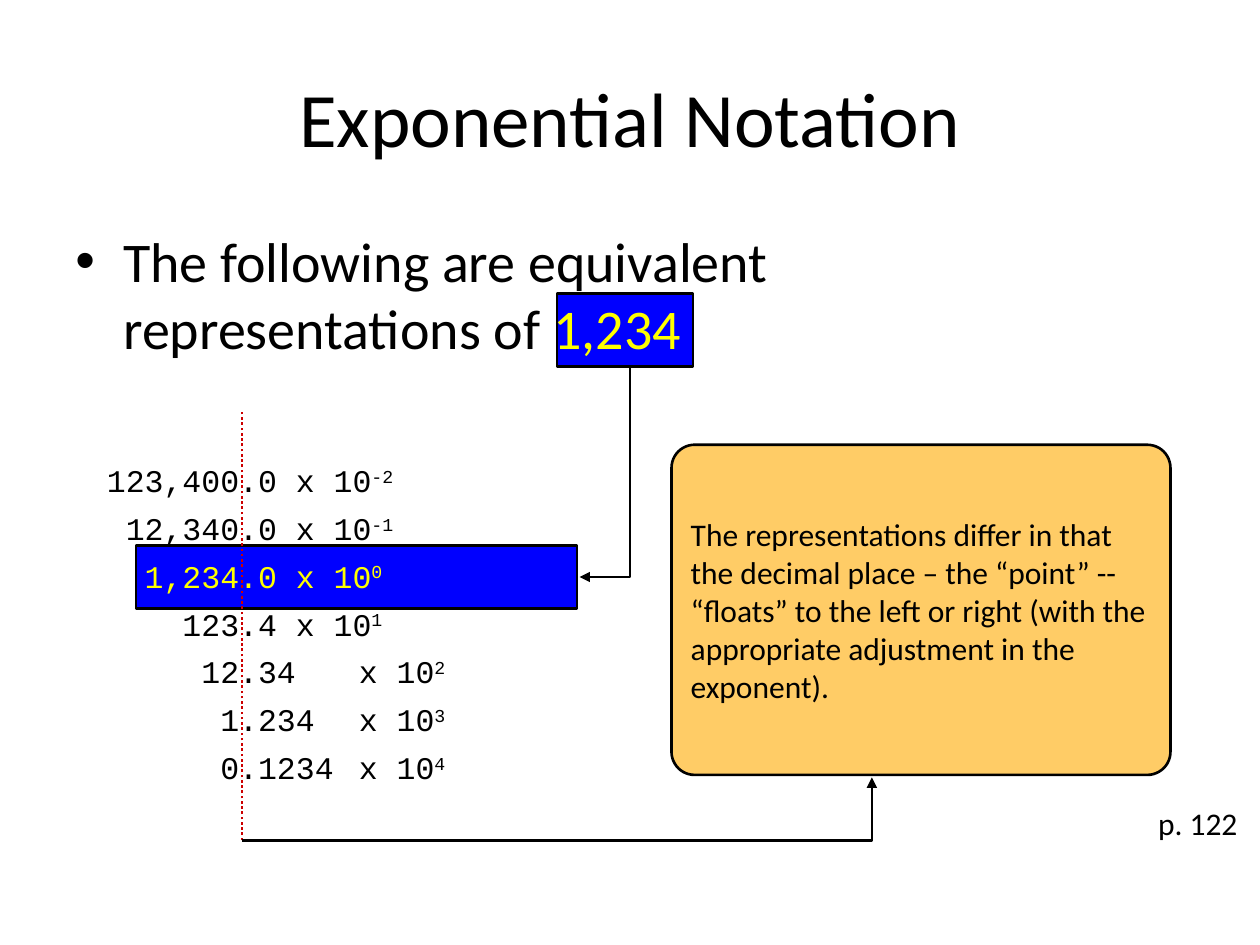
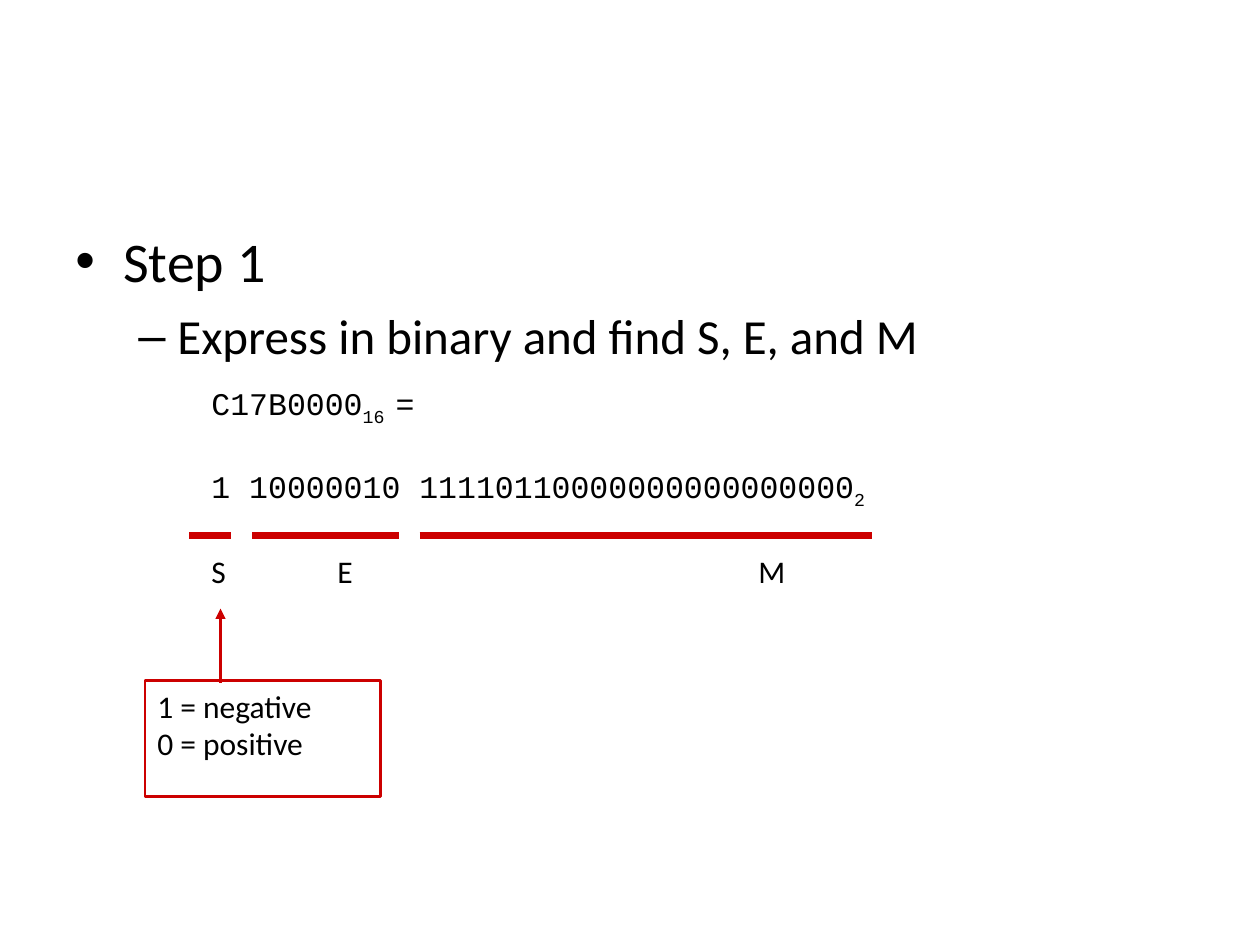
from dataclasses import dataclass

from lxml.etree import SubElement
from pptx import Presentation
from pptx.dml.color import RGBColor as RGB
from pptx.enum.dml import MSO_LINE
from pptx.enum.shapes import MSO_CONNECTOR, MSO_SHAPE as SHAPE
from pptx.enum.text import MSO_ANCHOR as ANCHOR, PP_ALIGN as ALIGN
from pptx.oxml.ns import qn
from pptx.util import Inches, Pt


@dataclass(frozen=True)
class Theme:
    black: RGB = RGB(0x00, 0x00, 0x00)
    blue: RGB = RGB(0x00, 0x00, 0xFF)
    yellow: RGB = RGB(0xFF, 0xFF, 0x00)
    orange: RGB = RGB(0xFF, 0xCC, 0x66)
    red: RGB = RGB(0xCC, 0x00, 0x00)
    sans: str = "Calibri"
    mono: str = "Courier New"
    title: int = 44
    bullet: int = 32
    sub_bullet: int = 28
    text: int = 18
    line: float = 1.5
    thick_line: float = 4.5


theme = Theme()


def style_line(shape, color, width=theme.line, arrow=False):
    """Give a shape or connector a plain outline, without shadow."""
    shape.line.color.rgb = color
    shape.line.width = Pt(width)
    properties = shape._element.spPr
    if properties.find(qn("a:effectLst")) is None:
        SubElement(properties, qn("a:effectLst"))
    if arrow:
        SubElement(shape.line._get_or_add_ln(), qn("a:tailEnd"), type="triangle")


def write(frame, runs, size=theme.text, font=theme.sans, color=theme.black, bullet=None, margin=0, hanging=0):
    """Add a paragraph made of (text, baseline in percent) runs."""
    frame.word_wrap = True
    paragraph = frame.paragraphs[0]
    if paragraph.runs:
        paragraph = frame.add_paragraph()
    paragraph.alignment = ALIGN.LEFT
    paragraph.font.size = Pt(size)
    paragraph.font.name = font
    paragraph.font.color.rgb = color
    for text, baseline in runs:
        run = paragraph.add_run()
        run.text = text
        if baseline:
            run._r.get_or_add_rPr().set("baseline", str(baseline * 1000))
    if bullet:
        properties = paragraph._p.get_or_add_pPr()
        properties.set("marL", str(Inches(margin)))
        properties.set("indent", str(-Inches(hanging)))
        SubElement(properties, qn("a:buFont"), typeface="Arial")
        SubElement(properties, qn("a:buChar"), char=bullet)
        paragraph.space_before = Pt(size * 0.24)
    return paragraph


presentation = Presentation()
presentation.slide_width = Inches(10)
presentation.slide_height = Inches(7.5)
title_only, blank = presentation.slide_layouts[5], presentation.slide_layouts[6]

# Slide 1: exponential notation
slide = presentation.slides.add_slide(title_only)
shapes = slide.shapes

title = shapes.title
title.left, title.top, title.width, title.height = map(Inches, (0.5, 0.3, 9, 1.25))
title.text_frame.vertical_anchor = ANCHOR.MIDDLE
write(title.text_frame, [("Exponential Notation", 0)], theme.title).alignment = ALIGN.CENTER

# Highlights behind the number and its matching row
for box in ((4.42, 2.33, 1.08, 0.58), (1.08, 4.33, 3.5, 0.5)):
    highlight = shapes.add_shape(SHAPE.RECTANGLE, *map(Inches, box))
    highlight.fill.solid()
    highlight.fill.fore_color.rgb = theme.blue
    style_line(highlight, theme.black)

# Dotted line through the decimal points
point_line = shapes.add_connector(
    MSO_CONNECTOR.STRAIGHT, Inches(1.92), Inches(6.67), Inches(1.92), Inches(3.25))
style_line(point_line, theme.red)
point_line.line.dash_style = MSO_LINE.ROUND_DOT

# Explanation and page reference
explanation = shapes.add_shape(
    SHAPE.ROUNDED_RECTANGLE, Inches(5.33), Inches(3.53), Inches(3.96), Inches(2.62))
explanation.adjustments[0] = 0.07
explanation.fill.solid()
explanation.fill.fore_color.rgb = theme.orange
style_line(explanation, theme.black)
explanation.text_frame.vertical_anchor = ANCHOR.MIDDLE
write(explanation.text_frame, [(
    "The representations differ in that the decimal place – the “point” -- “floats” "
    "to the left or right (with the appropriate adjustment in the exponent).", 0)])

page = shapes.add_textbox(Inches(8.75), Inches(6.33), Inches(1.17), Inches(0.4))
page_paragraph = write(page.text_frame, [("p. 122", 0)])
page_paragraph.alignment = ALIGN.RIGHT
page_paragraph.space_before = Pt(10)

# Bent arrows
for start, *bends in (
    ((5, 2.92), (5, 4.58), (4.6, 4.58)),
    ((1.92, 6.67), (6.92, 6.67), (6.92, 6.17)),
):
    builder = shapes.build_freeform(*map(Inches, start))
    builder.add_line_segments([(Inches(x), Inches(y)) for x, y in bends], close=False)
    arrow = builder.convert_to_shape()
    arrow.fill.background()
    style_line(arrow, theme.black, arrow=True)

# Statement
statement = shapes.add_textbox(Inches(0.5), Inches(1.75), Inches(8.17), Inches(4.95))
paragraph = write(
    statement.text_frame,
    [("The following are equivalent representations of ", 0), ("1,234", 0)],
    theme.bullet, bullet="•", margin=0.38, hanging=0.38)
paragraph.runs[1].font.color.rgb = theme.yellow

# Representations, indented so that the decimal points line up
character_width = 0.15
point_column, times_column = 7, 13
representations = shapes.add_textbox(Inches(0.75), Inches(3.67), Inches(4.17), Inches(2.71))
for mantissa, exponent in (
    ("123,400.0", -2), ("12,340.0", -1), ("1,234.0", 0), ("123.4", 1),
    ("12.34", 2), ("1.234", 3), ("0.1234", 4),
):
    paragraph = write(
        representations.text_frame, [(f"{mantissa}\tx 10", 0), (str(exponent), 30)],
        font=theme.mono, color=theme.yellow if exponent == 0 else theme.black)
    paragraph.line_spacing = 0.8
    paragraph.space_before = Pt(10)
    properties = paragraph._p.get_or_add_pPr()
    indent = (point_column - mantissa.index(".")) * character_width
    properties.set("marL", "0")
    properties.set("indent", str(Inches(indent)))
    tabs = SubElement(properties, qn("a:tabLst"))
    SubElement(tabs, qn("a:tab"), pos=str(Inches(times_column * character_width)), algn="l")

# Slide 2: sign, exponent and mantissa
slide = presentation.slides.add_slide(blank)
shapes = slide.shapes

steps = shapes.add_textbox(Inches(0.5), Inches(1.75), Inches(9), Inches(4.95))
write(steps.text_frame, [("Step 1", 0)], theme.bullet, bullet="•", margin=0.38, hanging=0.38)
sub_step = write(
    steps.text_frame, [("Express in binary and find S, E, and M", 0)],
    theme.sub_bullet, bullet="–", margin=0.81, hanging=0.31)
sub_step.level = 1

# Hexadecimal number and its bits
number = shapes.add_textbox(Inches(1.58), Inches(3), Inches(7.33), Inches(1.3))
write(number.text_frame, [("C17B0000", 0), ("16 ", -25), ("=", 0)], font=theme.mono)
bits = write(
    number.text_frame, [("1 10000010 11110110000000000000000", 0), ("2", -25)], font=theme.mono)
bits.space_before = Pt(23)

# Underlined fields with their letters
for letter, line_start, line_end, label_left, label_width in (
    ("S", 1.5, 1.83, 1.58, 0.39),
    ("E", 2, 3.17, 2.58, 0.4),
    ("M", 3.33, 6.92, 5.92, 0.5),
):
    underline = shapes.add_connector(
        MSO_CONNECTOR.STRAIGHT, Inches(line_start), Inches(4.25), Inches(line_end), Inches(4.25))
    style_line(underline, theme.red, theme.thick_line)
    label = shapes.add_textbox(Inches(label_left), Inches(4.33), Inches(label_width), Inches(0.5))
    write(label.text_frame, [(letter, 0)])

# Meaning of the sign bit
sign_box = shapes.add_shape(SHAPE.RECTANGLE, Inches(1.15), Inches(5.4), Inches(1.87), Inches(0.92))
sign_box.fill.background()
style_line(sign_box, theme.red)
sign_box.text_frame.vertical_anchor = ANCHOR.TOP
for meaning in ("1 = negative", "0 = positive"):
    write(sign_box.text_frame, [(meaning, 0)])

sign_arrow = shapes.add_connector(
    MSO_CONNECTOR.STRAIGHT, Inches(1.75), Inches(5.42), Inches(1.75), Inches(4.83))
style_line(sign_arrow, theme.red, arrow=True)

presentation.save("out.pptx")
